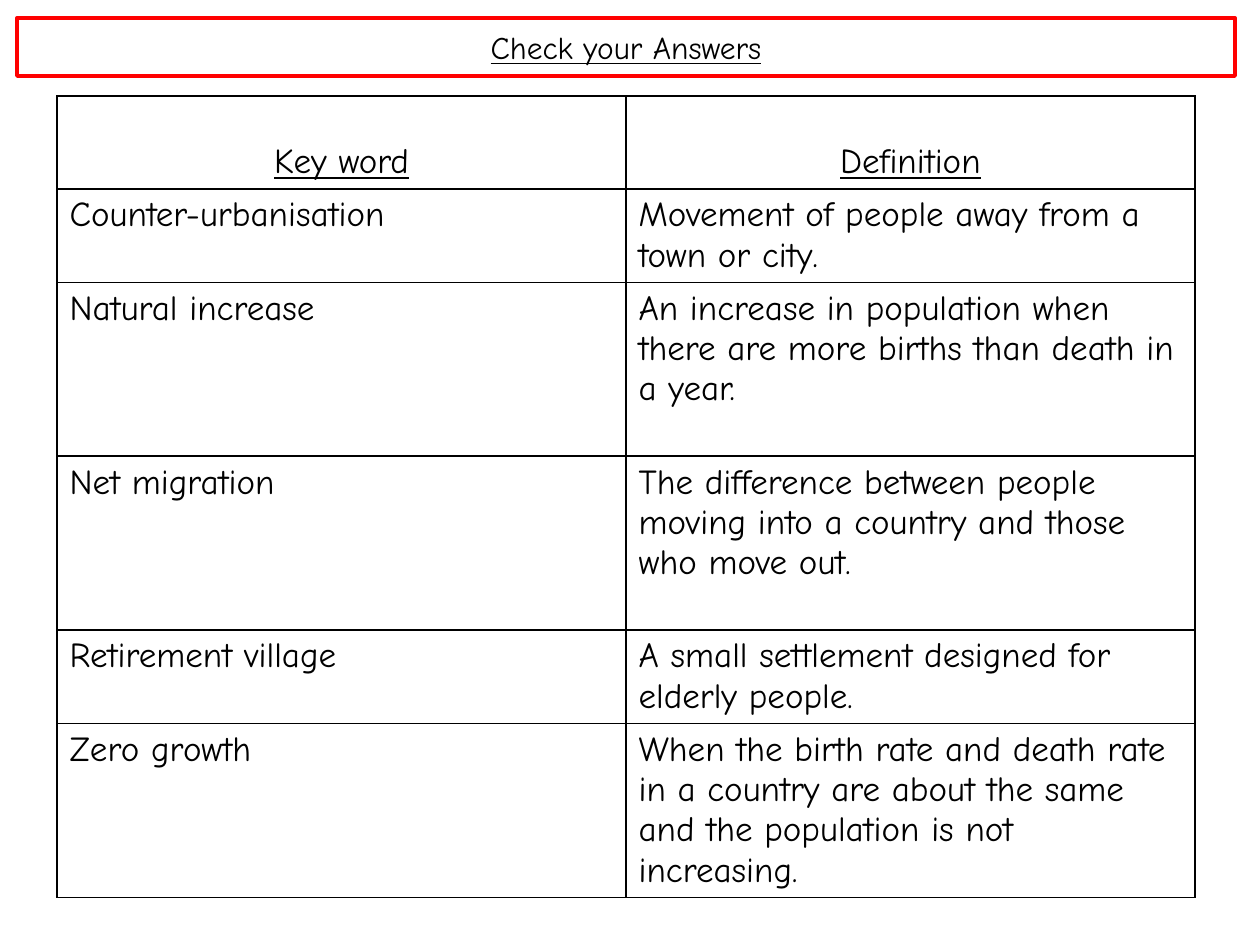
from dataclasses import dataclass

from lxml.etree import SubElement
from pptx import Presentation
from pptx.dml.color import RGBColor
from pptx.enum.text import MSO_ANCHOR as Anchor, MSO_AUTO_SIZE as AutoSize, PP_ALIGN as Align
from pptx.oxml.ns import qn
from pptx.util import Pt

EMU_PER_PX = 914400 / 126
TITLE_ONLY_LAYOUT = 5
SHORT_ROW, TALL_ROW = 93, 174


@dataclass(frozen=True)
class Theme:
    """Colours, font and point sizes of the slide."""

    font: str = "Comic Neue"
    ink: str = "000000"
    frame: str = "FF0000"
    title_size: int = 18
    table_size: int = 20
    frame_width: float = 2.25
    border_width: int = 1


THEME = Theme()
HEADINGS = ("Key word", "Definition")
GLOSSARY = (
    ("Counter-urbanisation", "Movement of people away from a town or city.", SHORT_ROW),
    ("Natural increase",
     "An increase in population when there are more births than death in a year.", TALL_ROW),
    ("Net migration",
     "The difference between people moving into a country and those who move out.", TALL_ROW),
    ("Retirement village", "A small settlement designed for elderly people.", SHORT_ROW),
    ("Zero growth",
     "When the birth rate and death rate in a country are about the same "
     "and the population is not increasing.", TALL_ROW),
)


def px(length):
    """Turn pixels into EMU."""
    return round(length * EMU_PER_PX)


def add_text(text_frame, text, size, heading=False):
    """Write one run, underlined and centred when it is a heading."""
    paragraph = text_frame.paragraphs[0]
    paragraph.alignment = Align.CENTER if heading else Align.LEFT
    run = paragraph.add_run()
    run.text = text
    run.font.name = THEME.font
    run.font.size = Pt(size)
    run.font.underline = heading
    run.font.color.rgb = RGBColor.from_string(THEME.ink)


def add_title(slide, text, left, top, width, height):
    """Place the framed title."""
    title = slide.shapes.title
    title.left, title.top, title.width, title.height = map(px, (left, top, width, height))
    title.line.color.rgb = RGBColor.from_string(THEME.frame)
    title.line.width = Pt(THEME.frame_width)
    title.text_frame.auto_size = AutoSize.NONE
    title.text_frame.vertical_anchor = Anchor.MIDDLE
    add_text(title.text_frame, text, THEME.title_size, heading=True)


def add_borders(cell):
    """Draw a thin line on all four sides of a cell."""
    properties = cell._tc.get_or_add_tcPr()
    for side in ("lnL", "lnR", "lnT", "lnB"):
        line = SubElement(properties, qn(f"a:{side}"), w=str(Pt(THEME.border_width)))
        fill = SubElement(line, qn("a:solidFill"))
        SubElement(fill, qn("a:srgbClr"), val=THEME.ink)


def fill_cell(cell, text, heading):
    """Format a cell and write its text."""
    add_borders(cell)
    cell.fill.background()
    cell.vertical_anchor = Anchor.BOTTOM if heading else Anchor.TOP
    add_text(cell.text_frame, text, THEME.table_size, heading)


def add_glossary(slide, left, top, column_width):
    """Add the table of key words and definitions."""
    rows = [(*HEADINGS, SHORT_ROW), *GLOSSARY]
    columns = len(HEADINGS)
    height = sum(row[-1] for row in rows)
    table = slide.shapes.add_table(
        len(rows), columns, px(left), px(top), px(column_width * columns), px(height)
    ).table
    table.first_row = table.horz_banding = False
    for column in table.columns:
        column.width = px(column_width)
    for index, (*texts, row_height) in enumerate(rows):
        table.rows[index].height = px(row_height)
        for column, text in enumerate(texts):
            fill_cell(table.cell(index, column), text, heading=index == 0)


def main():
    """Build and save the slide."""
    presentation = Presentation()
    presentation.slide_width, presentation.slide_height = px(1260), px(945)
    slide = presentation.slides.add_slide(presentation.slide_layouts[TITLE_ONLY_LAYOUT])
    add_title(slide, "Check your Answers", 17, 18, 1218, 58)
    add_glossary(slide, 57, 96, 569)
    presentation.save("out.pptx")


if __name__ == "__main__":
    main()
